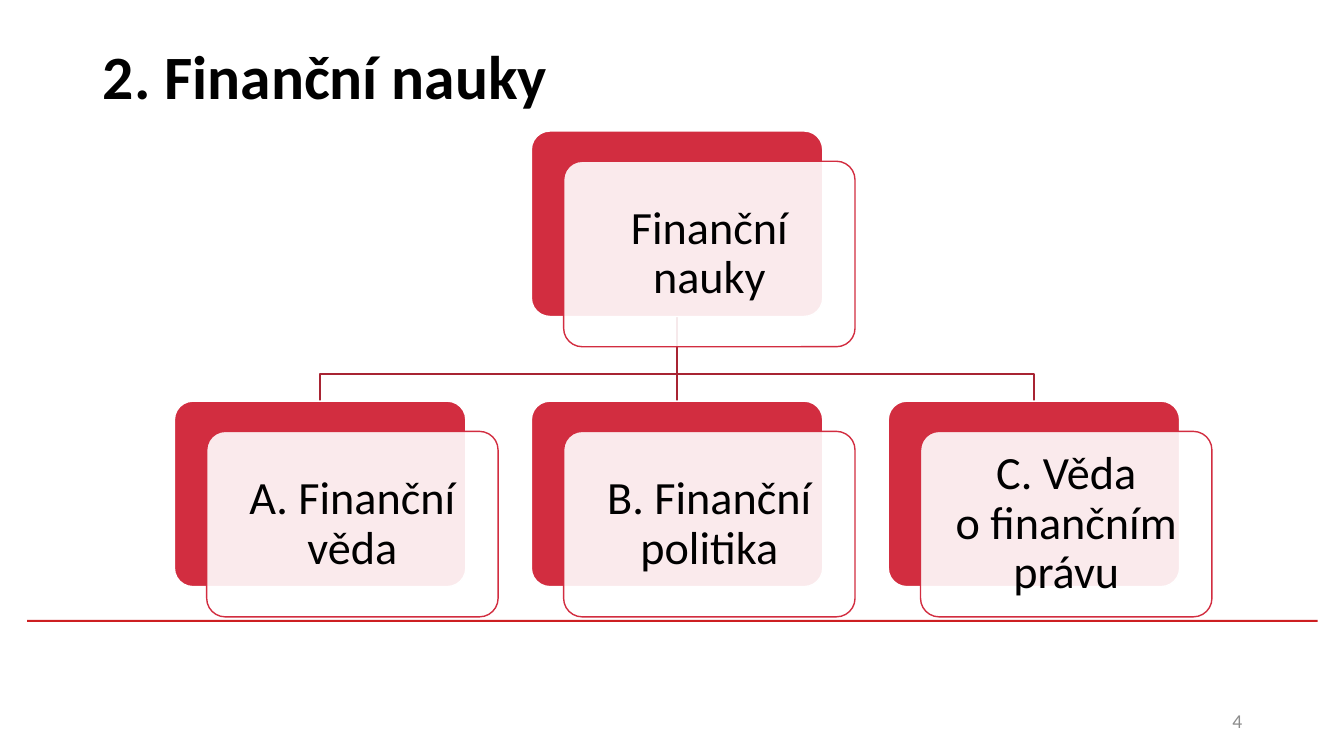
from pptx import Presentation
from pptx.dml.color import RGBColor
from pptx.enum.shapes import MSO_CONNECTOR, MSO_SHAPE
from pptx.enum.text import MSO_ANCHOR, PP_ALIGN
from pptx.oxml.ns import qn
from pptx.util import Inches, Pt
from lxml import etree

FONT = "Calibri"
RED, DARK_RED, RULE_RED = "D22D40", "A82433", "CD1F21"
BLACK, WHITE, GREY = "000000", "FFFFFF", "8C8C8C"
RECTANGLE, ROUNDED = MSO_SHAPE.RECTANGLE, MSO_SHAPE.ROUNDED_RECTANGLE
STRAIGHT = MSO_CONNECTOR.STRAIGHT
MIDDLE = MSO_ANCHOR.MIDDLE
LEFT, CENTER, RIGHT = PP_ALIGN.LEFT, PP_ALIGN.CENTER, PP_ALIGN.RIGHT

NODE_WIDTH, NODE_HEIGHT = 2.89, 1.84
NODE_STEP, LEVEL_STEP = 3.54, 2.68
CARD_SHIFT_X, CARD_SHIFT_Y = 0.32, 0.3
BRANCH_DROP = 0.57


def color(hex_code):
    return RGBColor.from_string(hex_code)


def style_paragraph(para, size, hex_code, align, bold=False):
    para.alignment = align
    para.font.name = FONT
    para.font.size = Pt(size)
    para.font.bold = bold
    para.font.color.rgb = color(hex_code)


def set_line(line, hex_code):
    line.color.rgb = color(hex_code)
    line.width = Pt(1)


def add_block(page, kind, box, fill, line=None):
    block = page.shapes.add_shape(kind, *map(Inches, box))
    block.shadow.inherit = False
    block.fill.solid()
    block.fill.fore_color.rgb = color(fill)
    if line:
        set_line(block.line, line)
    else:
        block.line.fill.background()
    return block


def add_title(page, text, box):
    title = page.shapes.title
    title.left, title.top, title.width, title.height = map(Inches, box)
    frame = title.text_frame
    frame.text = text
    frame.vertical_anchor = MIDDLE
    style_paragraph(frame.paragraphs[0], 44, BLACK, LEFT, bold=True)


def add_page_number(page, text, box):
    number = page.shapes.add_textbox(*map(Inches, box))
    frame = number.text_frame
    frame.word_wrap = True
    frame.vertical_anchor = MIDDLE
    frame.text = text
    style_paragraph(frame.paragraphs[0], 14, GREY, RIGHT)


def add_node(page, text, left, top):
    """Red plate with a translucent labelled card in front; returns the plate."""
    plate = add_block(page, ROUNDED, (left, top, NODE_WIDTH, NODE_HEIGHT), RED, WHITE)
    card_box = (left + CARD_SHIFT_X, top + CARD_SHIFT_Y, NODE_WIDTH, NODE_HEIGHT)
    card = add_block(page, ROUNDED, card_box, WHITE, RED)
    plate.adjustments[0] = card.adjustments[0] = 0.1

    # 90 % opaque card
    fill_color = card.fill._xPr.find(qn("a:solidFill"))[0]
    etree.SubElement(fill_color, qn("a:alpha"), val="90000")

    frame = card.text_frame
    frame.word_wrap = True
    frame.vertical_anchor = MIDDLE
    frame.margin_left = frame.margin_right = Inches(0.14)
    frame.margin_top = frame.margin_bottom = Inches(0.14)
    frame.text = text
    para = frame.paragraphs[0]
    para.line_spacing = 0.9
    style_paragraph(para, 33, BLACK, CENTER)
    return plate


def add_branch(page, start_x, start_y, end_x, end_y):
    """Right-angled line from a parent down to a child on its side."""
    bend_y = start_y + BRANCH_DROP
    builder = page.shapes.build_freeform(Inches(start_x), Inches(start_y))
    corners = [(start_x, bend_y), (end_x, bend_y), (end_x, end_y)]
    builder.add_line_segments([(Inches(x), Inches(y)) for x, y in corners], close=False)
    branch = builder.convert_to_shape()
    branch.shadow.inherit = False
    branch.fill.background()
    set_line(branch.line, DARK_RED)


def add_hierarchy(page, root_text, child_texts, left, top):
    middle = (len(child_texts) - 1) / 2
    root_left = left + middle * NODE_STEP
    child_top = top + LEVEL_STEP
    root_x = root_left + NODE_WIDTH / 2

    # Side branches and trunk lie behind the nodes
    for index in range(len(child_texts)):
        if index != middle:
            child_x = left + index * NODE_STEP + NODE_WIDTH / 2
            add_branch(page, root_x, top + NODE_HEIGHT, child_x, child_top)
    trunk = page.shapes.add_connector(
        STRAIGHT, Inches(root_x), Inches(top + NODE_HEIGHT), Inches(root_x), Inches(child_top))
    set_line(trunk.line, DARK_RED)
    etree.SubElement(trunk._element.spPr, qn("a:effectLst"))

    # Nodes
    root = add_node(page, root_text, root_left, top)
    children = [add_node(page, text, left + index * NODE_STEP, child_top)
                for index, text in enumerate(child_texts)]
    trunk.begin_connect(root, 2)
    trunk.end_connect(children[int(middle)], 0)


def main():
    deck = Presentation()
    deck.slide_width, deck.slide_height = Inches(13.33), Inches(7.5)
    page = deck.slides.add_slide(deck.slide_layouts[5])

    add_block(page, RECTANGLE, (0.27, 6.15, 12.8, 0.02), RULE_RED)
    add_title(page, "2. Finanční nauky", (0.92, 0.02, 11.5, 1.45))
    add_page_number(page, "4", (9.42, 6.95, 3, 0.4))
    add_hierarchy(
        page, "Finanční nauky",
        ["A. Finanční věda", "B. Finanční politika", "C. Věda\vo finančním právu"],
        1.73, 1.3)

    deck.save("out.pptx")


if __name__ == "__main__":
    main()
